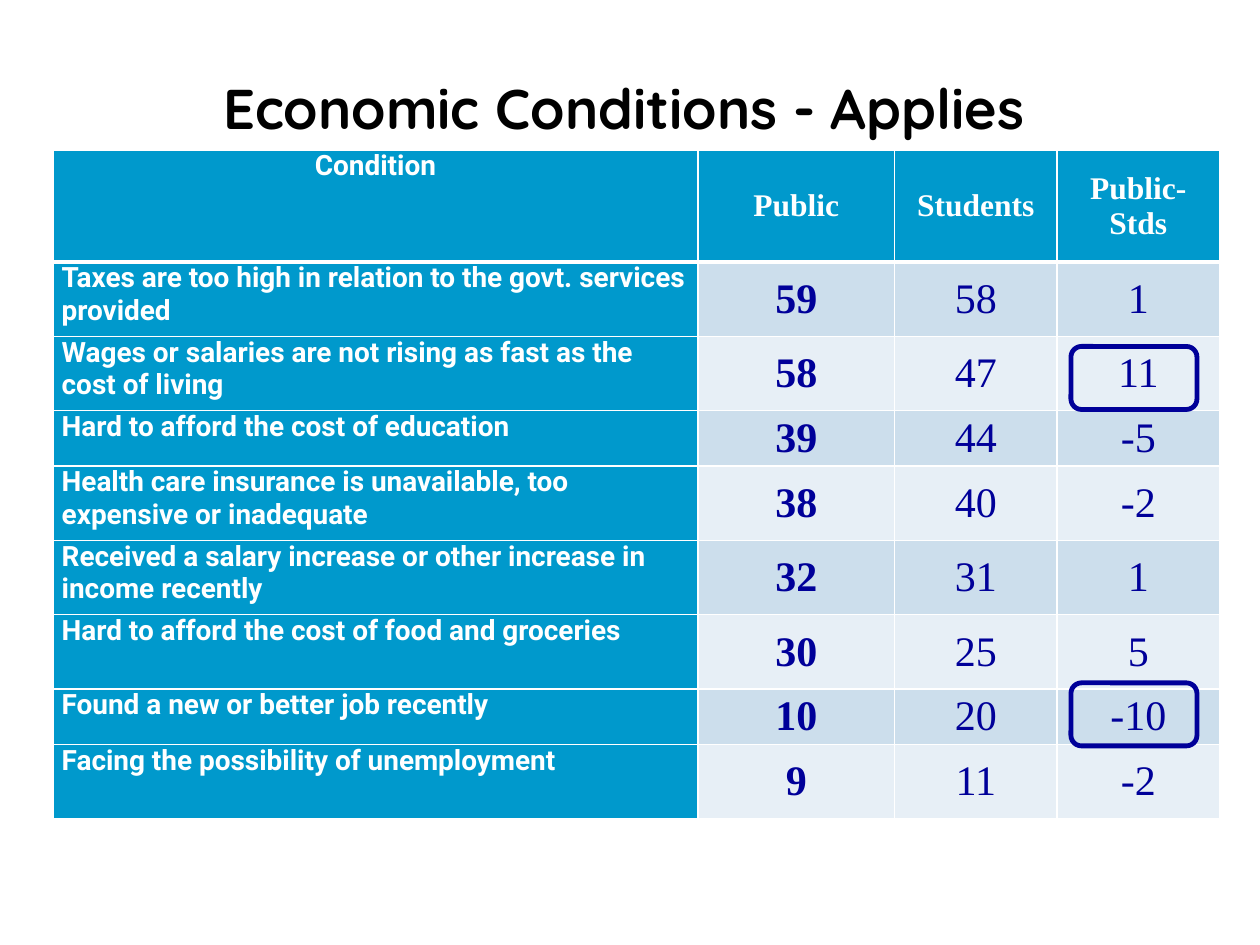
from lxml.etree import SubElement
from pptx import Presentation
from pptx.dml.color import RGBColor
from pptx.enum.shapes import MSO_SHAPE
from pptx.enum.text import MSO_ANCHOR, PP_ALIGN
from pptx.oxml.ns import qn
from pptx.util import Inches, Pt

WHITE, BLUE, NAVY = "FFFFFF", "0099CC", "000099"
BANDS = ["CCDEEC", "E7EFF6"]
SERIF = "Times New Roman"


def write(frame, text, font, size, color, bold=True, align=PP_ALIGN.CENTER):
    para = frame.paragraphs[0]
    para.alignment = align
    span = para.add_run()
    span.text = text
    span.font.name = font
    span.font.size = Pt(size)
    span.font.bold = bold
    span.font.color.rgb = RGBColor.from_string(color)


def add_border(cell, side, width):
    line = SubElement(cell._tc.get_or_add_tcPr(), qn(f"a:ln{side}"), w=str(Pt(width)))
    fill = SubElement(line, qn("a:solidFill"))
    SubElement(fill, qn("a:srgbClr"), val=WHITE)


deck = Presentation()
deck.slide_width, deck.slide_height = Inches(10), Inches(7.5)
page = deck.slides.add_slide(deck.slide_layouts[5])

title = page.shapes.title
title.left, title.top = Inches(0.58), Inches(0.42)
title.width, title.height = Inches(8.75), Inches(0.75)
title.text_frame.vertical_anchor = MSO_ANCHOR.BOTTOM
write(title.text_frame, "Economic Conditions - Applies", "Quicksand", 32, "000000")

rows = [
    ("Condition", "Public", "Students", "Public-Stds"),
    ("Taxes are too high in relation to the govt. services provided", 59, 58, 1),
    ("Wages or salaries are not rising as fast as the cost of living", 58, 47, 11),
    ("Hard to afford the cost of education", 39, 44, -5),
    ("Health care insurance is unavailable, too expensive or inadequate", 38, 40, -2),
    ("Received a salary increase or other increase in income recently", 32, 31, 1),
    ("Hard to afford the cost of food and groceries", 30, 25, 5),
    ("Found a new or better job recently", 10, 20, -10),
    ("Facing the possibility of unemployment", 9, 11, -2),
]
column_widths = [5.12, 1.56, 1.29, 1.29]
row_heights = [0.89, 0.59, 0.59, 0.44, 0.59, 0.59, 0.59, 0.44, 0.59]

table = page.shapes.add_table(
    len(rows), len(column_widths),
    Inches(0.42), Inches(1.19), Inches(9.25), Inches(5.32),
).table
for column, width in zip(table.columns, column_widths):
    column.width = Inches(width)
for row, height in zip(table.rows, row_heights):
    row.height = Inches(height)

for r, values in enumerate(rows):
    for c, value in enumerate(values):
        cell = table.cell(r, c)
        header, label = r == 0, c == 0
        cell.margin_left = cell.margin_right = Inches(0.07)
        cell.margin_top = cell.margin_bottom = 0
        cell.vertical_anchor = MSO_ANCHOR.TOP if label else MSO_ANCHOR.MIDDLE
        add_border(cell, "L", 1)
        add_border(cell, "R", 1)
        add_border(cell, "T", 3 if r == 1 else 1)
        add_border(cell, "B", 3 if header else 1)
        cell.fill.solid()
        fill = BLUE if header or label else BANDS[(r - 1) % 2]
        cell.fill.fore_color.rgb = RGBColor.from_string(fill)
        if label:
            align = PP_ALIGN.CENTER if header else PP_ALIGN.LEFT
            write(cell.text_frame, value, "Roboto", 16, WHITE, align=align)
        elif header:
            write(cell.text_frame, value, SERIF, 18, WHITE)
        else:
            write(cell.text_frame, str(value), SERIF, 24, NAVY, bold=c == 1)

for top in (2.75, 5.42):
    highlight = page.shapes.add_shape(
        MSO_SHAPE.ROUNDED_RECTANGLE, Inches(8.5), Inches(top), Inches(1), Inches(0.5)
    )
    highlight.shadow.inherit = False
    highlight.fill.background()
    highlight.line.color.rgb = RGBColor.from_string(NAVY)
    highlight.line.width = Pt(2.75)

deck.save("out.pptx")
